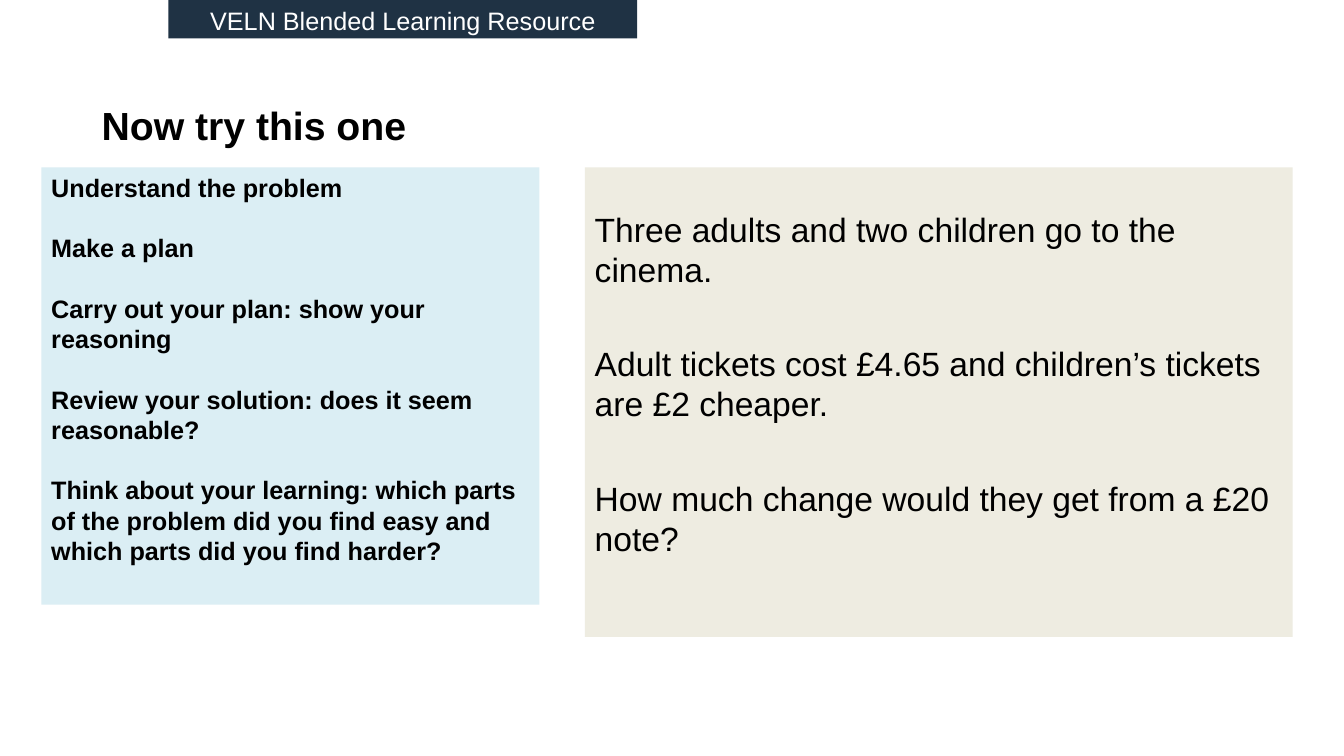
from dataclasses import dataclass

from pptx import Presentation
from pptx.dml.color import RGBColor
from pptx.enum.shapes import MSO_SHAPE as Preset
from pptx.enum.text import MSO_ANCHOR as Anchor, PP_ALIGN as Align
from pptx.slide import Slide
from pptx.util import Inches, Pt

COLOURS = {
    "text": "000000",
    "banner_text": "FFFFFF",
    "banner": "1F3244",
    "steps": "DBEEF4",
    "question": "EEECE1",
}
FONT = "Arial"


@dataclass(frozen=True)
class Panel:
    left: float
    top: float
    width: float
    height: float
    paragraphs: tuple[str, ...]
    size: float
    fill: str | None = None
    colour: str = "text"
    bold: bool = False
    align: Align = Align.LEFT
    anchor: Anchor = Anchor.TOP
    top_inset: float = 0.05
    gap: float = 0


PANELS = (
    Panel(0.91, 0.92, 9, 0.64, ("Now try this one",), 28, bold=True, anchor=Anchor.MIDDLE),
    Panel(
        0.41, 1.66, 4.94, 4.34,
        (
            "Understand the problem",
            "Make a plan",
            "Carry out your plan: show your reasoning",
            "Review your solution: does it seem reasonable?",
            "Think about your learning: which parts of the problem did you find easy "
            "and which parts did you find harder?",
        ),
        18, fill="steps", bold=True, gap=21.6,
    ),
    Panel(
        1.67, 0, 4.65, 0.38, ("VELN Blended Learning Resource",), 18,
        fill="banner", colour="banner_text", align=Align.CENTER,
    ),
    Panel(
        5.8, 1.66, 7.02, 4.66,
        (
            "Three adults and two children go to the cinema.",
            "Adult tickets cost £4.65 and children’s tickets are £2 cheaper.",
            "How much change would they get from a £20 note?",
        ),
        24, fill="question", top_inset=0.41, gap=38.4,
    ),
)


def rgb(name: str) -> RGBColor:
    return RGBColor.from_string(COLOURS[name])


def draw_panel(slide: Slide, panel: Panel) -> None:
    place = [Inches(n) for n in (panel.left, panel.top, panel.width, panel.height)]
    if panel.fill:
        holder = slide.shapes.add_shape(Preset.RECTANGLE, *place)
        holder.shadow.inherit = False
        holder.fill.solid()
        holder.fill.fore_color.rgb = rgb(panel.fill)
        holder.line.fill.background()
    else:
        holder = slide.shapes.add_textbox(*place)

    frame = holder.text_frame
    frame.word_wrap = True
    frame.vertical_anchor = panel.anchor
    frame.margin_top = Inches(panel.top_inset)
    for index, wording in enumerate(panel.paragraphs):
        paragraph = frame.add_paragraph() if index else frame.paragraphs[0]
        paragraph.alignment = panel.align
        if index:
            paragraph.space_before = Pt(panel.gap)
        run = paragraph.add_run()
        run.text = wording
        run.font.name = FONT
        run.font.size = Pt(panel.size)
        run.font.bold = panel.bold
        run.font.color.rgb = rgb(panel.colour)


def main() -> None:
    deck = Presentation()
    deck.slide_width = Inches(13.33)
    deck.slide_height = Inches(7.5)
    slide = deck.slides.add_slide(deck.slide_layouts[6])
    for panel in PANELS:
        draw_panel(slide, panel)
    deck.save("out.pptx")


if __name__ == "__main__":
    main()
